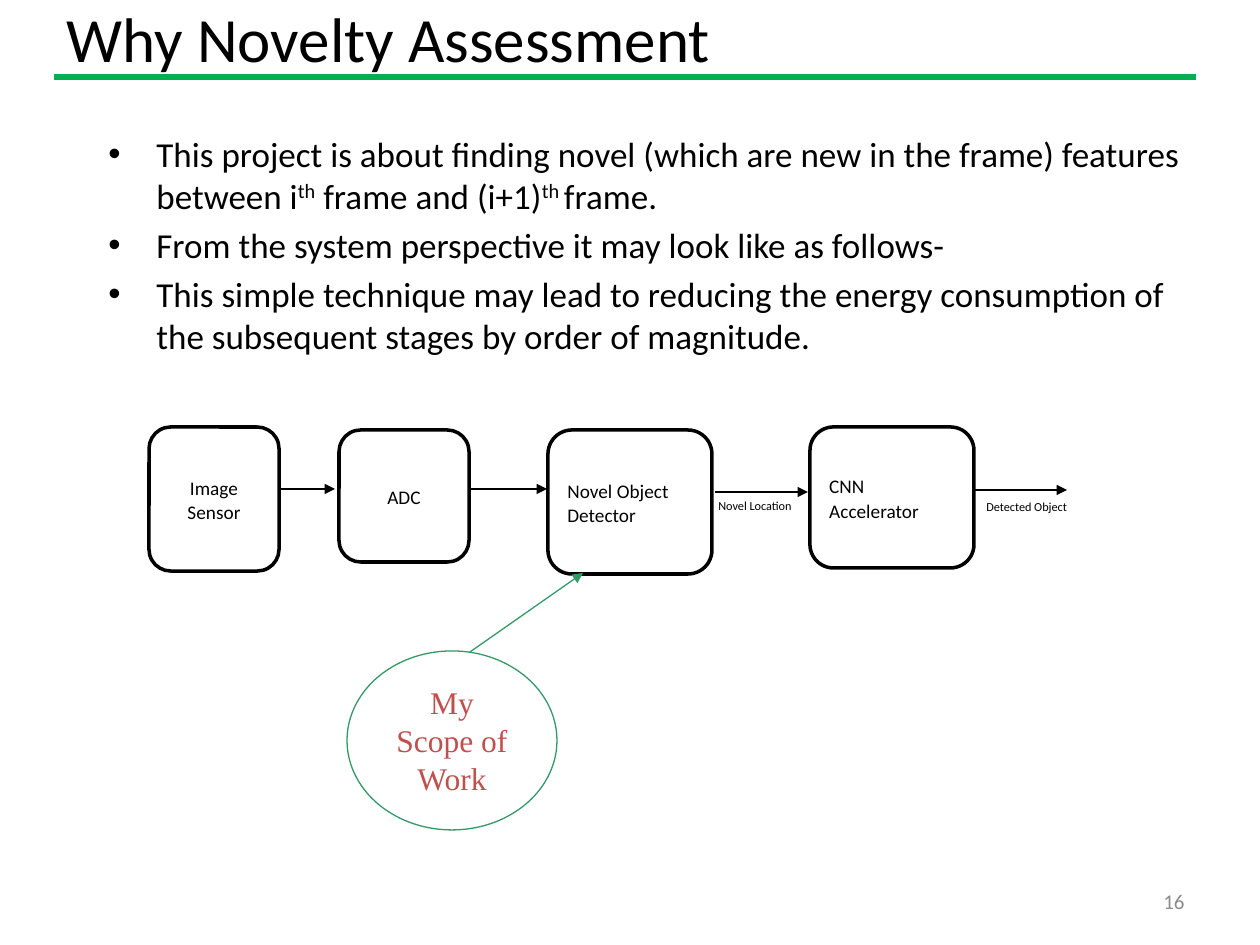
from dataclasses import dataclass

from lxml import etree
from pptx import Presentation
from pptx.dml.color import RGBColor
from pptx.enum.shapes import MSO_CONNECTOR, MSO_SHAPE
from pptx.enum.text import MSO_ANCHOR, MSO_AUTO_SIZE, PP_ALIGN
from pptx.oxml.ns import qn
from pptx.util import Emu, Pt

EMU_PER_PX = 914400 / 126
BLACK = RGBColor(0x00, 0x00, 0x00)
GRAY = RGBColor(0x8C, 0x8C, 0x8C)
RULE_GREEN = RGBColor(0x00, 0xB0, 0x50)
SCOPE_GREEN = RGBColor(0x33, 0x99, 0x66)
SCOPE_RED = RGBColor(0xC0, 0x50, 0x4D)
LEFT, CENTER, RIGHT = PP_ALIGN.LEFT, PP_ALIGN.CENTER, PP_ALIGN.RIGHT
TOP, MIDDLE = MSO_ANCHOR.TOP, MSO_ANCHOR.MIDDLE
NO_AUTOFIT = MSO_AUTO_SIZE.NONE
STRAIGHT = MSO_CONNECTOR.STRAIGHT
ROUNDED, OVAL = MSO_SHAPE.ROUNDED_RECTANGLE, MSO_SHAPE.OVAL


@dataclass(frozen=True)
class Box:
    left: int
    top: int
    width: int
    height: int


@dataclass(frozen=True)
class Stage:
    text: str
    box: Box
    align: PP_ALIGN


@dataclass(frozen=True)
class Line:
    start: tuple[int, int]
    end: tuple[int, int]
    color: RGBColor = BLACK
    width: float = 0.75
    arrow: bool = True


@dataclass(frozen=True)
class Label:
    text: str
    box: Box


TITLE_BOX = Box(54, 6, 1134, 62)
BODY_BOX = Box(96, 126, 1101, 519)
NUMBER_BOX = Box(903, 876, 294, 50)
SCOPE_BOX = Box(347, 651, 210, 179)

BULLETS = [
    [
        ("This project is about finding novel (which are new in the frame) "
         "features between i", False),
        ("th", True),
        (" frame and (i+1)", False),
        ("th ", True),
        ("frame.", False),
    ],
    [("From the system perspective it may look like as follows-", False)],
    [("This simple technique may lead to reducing the energy consumption of "
      "the subsequent stages by order of magnitude.", False)],
]
STAGES = [
    Stage("Image Sensor", Box(149, 427, 130, 144), CENTER),
    Stage("ADC", Box(339, 430, 130, 132), CENTER),
    Stage("Novel Object Detector", Box(548, 430, 164, 144), LEFT),
    Stage("CNN Accelerator", Box(810, 427, 164, 141), LEFT),
]
LABELS = [
    Label("Novel Location", Box(706, 491, 120, 82)),
    Label("Detected Object", Box(974, 492, 120, 82)),
]
LINES = [
    Line((54, 77), (1196, 77), RULE_GREEN, 3, False),
    Line((279, 489), (335, 489)),
    Line((470, 489), (547, 489)),
    Line((715, 492), (808, 492)),
    Line((975, 490), (1067, 490)),
    Line((470, 652), (583, 573), SCOPE_GREEN),
]


def px(value: int) -> Emu:
    return Emu(round(value * EMU_PER_PX))


def place(box: Box) -> tuple[Emu, Emu, Emu, Emu]:
    return px(box.left), px(box.top), px(box.width), px(box.height)


def write_text(shape, paragraphs, *, size: int, color: RGBColor = BLACK,
               font: str = "Calibri", align: PP_ALIGN = LEFT,
               anchor: MSO_ANCHOR = TOP, line_spacing: float = 1.0,
               before: int = 0, after: int = 0, bullet_indent: int = 0) -> None:
    if isinstance(paragraphs, str):
        paragraphs = [[(paragraphs, False)]]
    frame = shape.text_frame
    frame.word_wrap = True
    frame.auto_size = NO_AUTOFIT
    frame.vertical_anchor = anchor
    for index, runs in enumerate(paragraphs):
        paragraph = frame.add_paragraph() if index else frame.paragraphs[0]
        paragraph.alignment = align
        paragraph.line_spacing = line_spacing
        paragraph.space_before = Pt(before)
        paragraph.space_after = Pt(after)
        if bullet_indent:
            properties = paragraph._p.get_or_add_pPr()
            properties.set("marL", str(px(bullet_indent)))
            properties.set("indent", str(-px(bullet_indent)))
            etree.SubElement(properties, qn("a:buFont"), typeface="Arial")
            etree.SubElement(properties, qn("a:buChar"), char="•")
        for text, superscript in runs:
            run = paragraph.add_run()
            run.text = text
            run.font.name = font
            run.font.size = Pt(size)
            run.font.color.rgb = color
            if superscript:
                run._r.get_or_add_rPr().set("baseline", "30000")


def add_text(slide, box: Box, paragraphs, **text_format) -> None:
    write_text(slide.shapes.add_textbox(*place(box)), paragraphs, **text_format)


def add_outline(slide, kind: MSO_SHAPE, box: Box, text: str, *,
                line_color: RGBColor, line_width: float, **text_format) -> None:
    shape = slide.shapes.add_shape(kind, *place(box))
    shape.shadow.inherit = False
    shape.fill.background()
    shape.line.color.rgb = line_color
    shape.line.width = Pt(line_width)
    write_text(shape, text, **text_format)


def add_line(slide, line: Line) -> None:
    connector = slide.shapes.add_connector(
        STRAIGHT, *map(px, line.start + line.end))
    connector.line.color.rgb = line.color
    connector.line.width = Pt(line.width)
    properties = connector._element.spPr
    if line.arrow:
        etree.SubElement(properties.find(qn("a:ln")), qn("a:tailEnd"),
                         type="triangle")
    etree.SubElement(properties, qn("a:effectLst"))


def main() -> None:
    presentation = Presentation()
    presentation.slide_width = px(1260)
    presentation.slide_height = px(945)
    slide = presentation.slides.add_slide(presentation.slide_layouts[5])

    title = slide.shapes.title
    title.left, title.top, title.width, title.height = place(TITLE_BOX)
    write_text(title, "Why Novelty Assessment", size=36, anchor=MIDDLE)
    add_text(slide, NUMBER_BOX, "16", size=12, color=GRAY, align=RIGHT,
             anchor=MIDDLE)
    add_text(slide, BODY_BOX, BULLETS, size=20, before=4, bullet_indent=48)

    for stage in STAGES:
        add_outline(slide, ROUNDED, stage.box, stage.text, line_color=BLACK,
                    line_width=2, size=11, align=stage.align, anchor=MIDDLE,
                    line_spacing=1.07, after=8)
    for label in LABELS:
        add_text(slide, label.box, label.text, size=7, line_spacing=1.07,
                 after=8)
    add_outline(slide, OVAL, SCOPE_BOX, "My Scope of Work",
                line_color=SCOPE_GREEN, line_width=0.75, size=18,
                color=SCOPE_RED, font="Times New Roman", align=CENTER)
    for line in LINES:
        add_line(slide, line)

    presentation.save("out.pptx")


if __name__ == "__main__":
    main()
